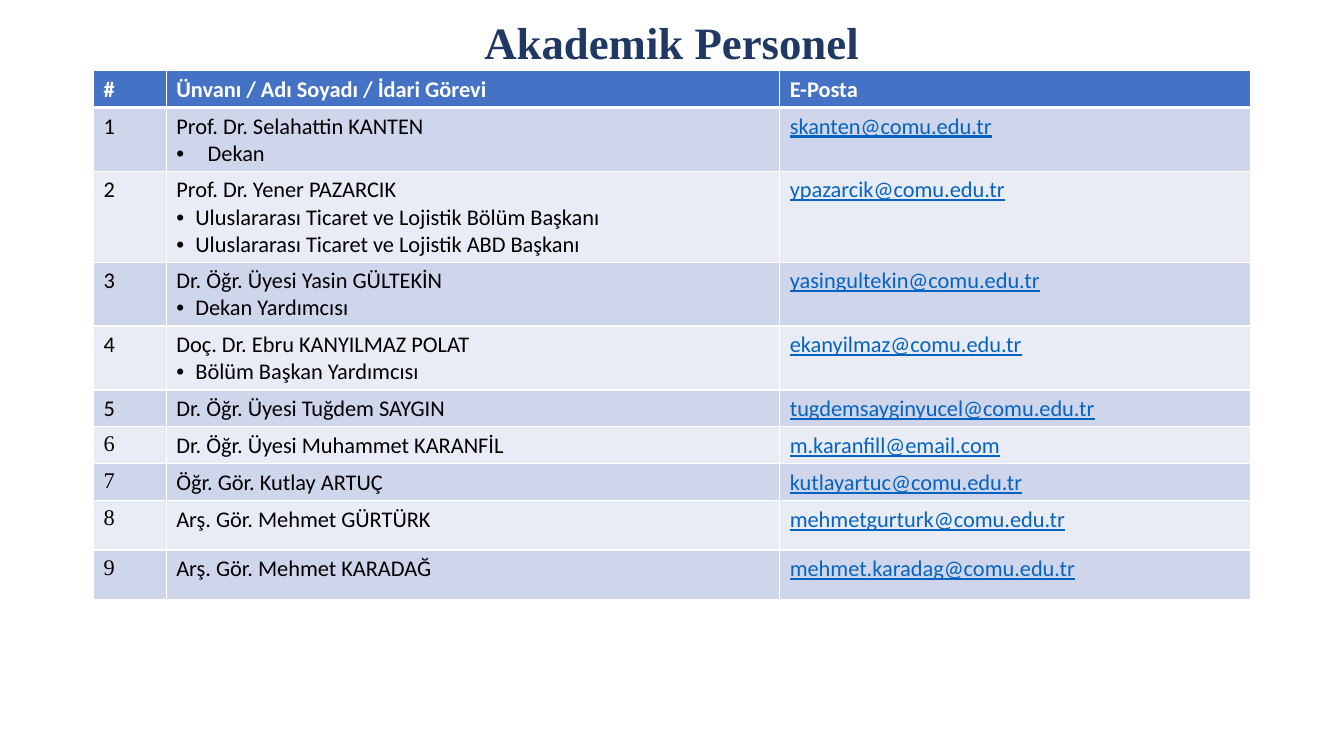
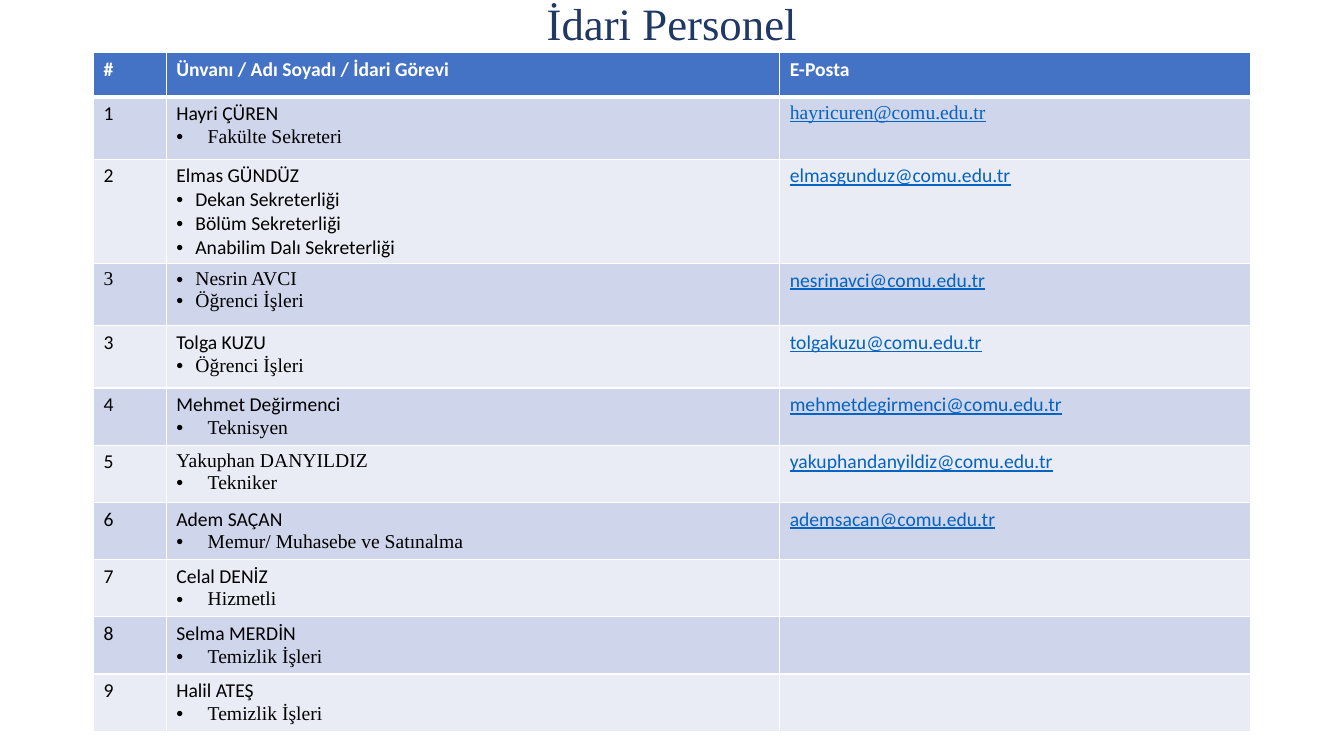
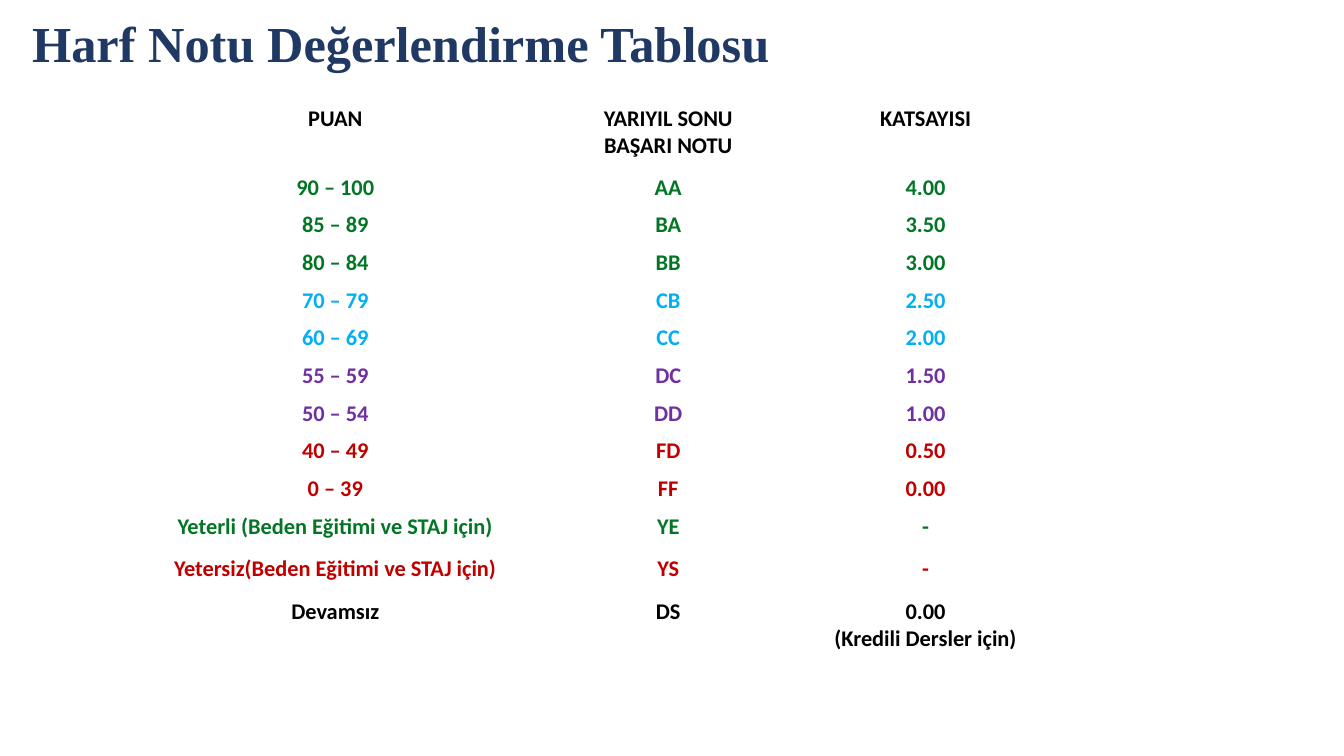
from pptx import Presentation
from pptx.dml.color import RGBColor as RGB
from pptx.enum.text import MSO_ANCHOR as Anchor, PP_ALIGN as Align
from pptx.oxml.ns import qn
from pptx.util import Cm, Pt
from lxml.etree import SubElement, Element

NAVY = RGB(0x20, 0x38, 0x64)
BLUE = RGB(0x44, 0x72, 0xC4)
LINK = RGB(0x05, 0x63, 0xC1)
DARK = RGB(0xCF, 0xD5, 0xEA)
PALE = RGB(0xE9, 0xEB, 0xF5)
WHITE = RGB(0xFF, 0xFF, 0xFF)
BLACK = RGB(0, 0, 0)
GREEN = RGB(0x03, 0x76, 0x26)
SKY = RGB(0x00, 0xB0, 0xF0)
PLUM = RGB(0x70, 0x30, 0xA0)
RED = RGB(0xC0, 0, 0)
SANS, SERIF = "Calibri", "Times New Roman"
NEAR, FAR = Cm(0.48), Cm(0.79)
PLAIN = "{2D5ABB26-0587-4C30-8999-92F81FD0307C}"


def sans(text, gap=0):
    return text, gap, SANS


def serif(text, gap=0):
    return text, gap, SERIF


HEAD = ["#", "Ünvanı / Adı Soyadı / İdari Görevi", "E-Posta"]

STAFF = [
    (0.92, sans("1"), [sans("Prof. Dr. Selahattin KANTEN"), sans("Dekan", FAR)],
     sans("skanten@comu.edu.tr")),
    (0.92, sans("2"), [sans("Prof. Dr. Yener PAZARCIK"),
                       sans("Uluslararası Ticaret ve Lojistik Bölüm Başkanı", NEAR),
                       sans("Uluslararası Ticaret ve Lojistik ABD Başkanı", NEAR)],
     sans("ypazarcik@comu.edu.tr")),
    (0.92, sans("3"), [sans("Dr. Öğr. Üyesi Yasin GÜLTEKİN"), sans("Dekan Yardımcısı", NEAR)],
     sans("yasingultekin@comu.edu.tr")),
    (0.92, sans("4"), [sans("Doç. Dr. Ebru KANYILMAZ POLAT"),
                       sans("Bölüm Başkan Yardımcısı", NEAR)],
     sans("ekanyilmaz@comu.edu.tr")),
    (0.92, sans("5"), [sans("Dr. Öğr. Üyesi Tuğdem SAYGIN")],
     sans("tugdemsayginyucel@comu.edu.tr")),
    (0.92, serif("6"), [sans("Dr. Öğr. Üyesi Muhammet KARANFİL")],
     sans("m.karanfill@email.com")),
    (0.92, serif("7"), [sans("Öğr. Gör. Kutlay ARTUÇ")], sans("kutlayartuc@comu.edu.tr")),
    (1.24, serif("8"), [sans("Arş. Gör. Mehmet GÜRTÜRK")], sans("mehmetgurturk@comu.edu.tr")),
    (1.24, serif("9"), [sans("Arş. Gör. Mehmet KARADAĞ")], sans("mehmet.karadag@comu.edu.tr")),
]

OFFICE = [
    (1.57, sans("1"), [sans("Hayri ÇÜREN"), serif("Fakülte Sekreteri", FAR)],
     serif("hayricuren@comu.edu.tr")),
    (2.24, sans("2"), [sans("Elmas GÜNDÜZ"), sans("Dekan Sekreterliği", NEAR),
                       sans("Bölüm Sekreterliği", NEAR),
                       sans("Anabilim Dalı Sekreterliği", NEAR)],
     sans("elmasgunduz@comu.edu.tr")),
    (1.57, serif("3"), [serif("Nesrin AVCI", NEAR), serif("Öğrenci İşleri", NEAR)],
     sans("nesrinavci@comu.edu.tr")),
    (1.57, sans("3"), [sans("Tolga KUZU"), serif("Öğrenci İşleri", NEAR)],
     sans("tolgakuzu@comu.edu.tr")),
    (0.92, sans("4"), [sans("Mehmet Değirmenci"), serif("Teknisyen", FAR)],
     sans("mehmetdegirmenci@comu.edu.tr")),
    (0.92, sans("5"), [serif("Yakuphan DANYILDIZ"), serif("Tekniker", FAR)],
     sans("yakuphandanyildiz@comu.edu.tr")),
    (0.92, sans("6"), [sans("Adem SAÇAN"), serif("Memur/ Muhasebe ve Satınalma", FAR)],
     sans("ademsacan@comu.edu.tr")),
    (0.92, sans("7"), [sans("Celal DENİZ"), serif("Hizmetli", FAR)], sans("")),
    (0.92, sans("8"), [sans("Selma MERDİN"), serif("Temizlik İşleri", FAR)], sans("")),
    (1.24, sans("9"), [sans("Halil ATEŞ"), serif("Temizlik İşleri", FAR)], sans("")),
]

LISTS = [
    ("Akademik Personel", (8.66, 0, 16.54, 2.29), True, 1.78, 0.92, 16, STAFF),
    ("İdari Personel", (4.19, 0, 25.48, 1.32), False, 1.32, 1.12, 14, OFFICE),
]

GRADES = [
    (1.73, BLACK, "PUAN", "YARIYIL SONU BAŞARI NOTU", "KATSAYISI"),
    (0.95, GREEN, "90 – 100", "AA", "4.00"),
    (0.95, GREEN, "85 – 89", "BA", "3.50"),
    (0.95, GREEN, "80 – 84", "BB", "3.00"),
    (0.95, SKY, "70 – 79", "CB", "2.50"),
    (0.95, SKY, "60 – 69", "CC", "2.00"),
    (0.95, PLUM, "55 – 59", "DC", "1.50"),
    (0.95, PLUM, "50 – 54", "DD", "1.00"),
    (0.95, RED, "40 – 49", "FD", "0.50"),
    (0.95, RED, "0 – 39", "FF", "0.00"),
    (1.07, GREEN, "Yeterli (Beden Eğitimi ve STAJ için)", "YE", "-"),
    (1.07, RED, "Yetersiz(Beden Eğitimi ve STAJ için)", "YS", "-"),
    (1.68, BLACK, "Devamsız", "DS", "0.00\n(Kredili Dersler için)"),
]


def style(para, face, size, tint, bold=False, under=False):
    for run in para.runs:
        font = run.font
        font.name, font.size, font.bold = face, Pt(size), bold
        font.color.rgb = tint
        if under:
            font.underline = True


def add_title(slide, text, box, size=32, bold=True, align=Align.CENTER):
    frame = slide.shapes.add_textbox(*map(Cm, box)).text_frame
    frame.word_wrap = True
    frame.vertical_anchor = Anchor.MIDDLE
    para = frame.paragraphs[0]
    para.text = text
    para.alignment = align
    para.line_spacing = 0.9
    style(para, SERIF, size, NAVY, bold)


def add_grid(slide, left, top, cols, rows):
    shape = slide.shapes.add_table(len(rows), len(cols), Cm(left), Cm(top),
                                   Cm(sum(cols)), Cm(sum(rows)))
    for node in shape.element.iter(qn("a:tableStyleId")):
        node.text = PLAIN
    grid = shape.table
    grid.horz_banding = False
    for col, width in zip(grid.columns, cols):
        col.width = Cm(width)
    for row, height in zip(grid.rows, rows):
        row.height = Cm(height)
    return grid


def add_edges(cell, over, under):
    props = cell._tc.get_or_add_tcPr()
    for spot, (side, width) in enumerate(zip("LRTB", (1, 1, over, under))):
        line = Element(qn("a:ln" + side), w=str(Pt(width)))
        fill = SubElement(line, qn("a:solidFill"))
        SubElement(fill, qn("a:srgbClr"), val=str(WHITE))
        props.insert(spot, line)


def add_bullet(para, gap):
    props = para._p.get_or_add_pPr()
    props.set("marL", str(gap))
    props.set("indent", str(-gap))
    SubElement(props, qn("a:buFont"), typeface="Arial")
    SubElement(props, qn("a:buChar"), char="•")


def fill_cell(cell, lines, size, tint, bold=False, under=False):
    cell.text_frame.text = "\n".join(text for text, _, _ in lines)
    for para, (_, gap, face) in zip(cell.text_frame.paragraphs, lines):
        if gap:
            add_bullet(para, gap)
        style(para, face, size, tint, bold, under)


def add_list(slide, title, box, bold, top, head, size, people):
    add_title(slide, title, box, bold=bold)
    heights = [head] + [person[0] for person in people]
    grid = add_grid(slide, 2.36, top, (1.83, 15.46, 11.87), heights)
    body = [[[sans(text)] for text in HEAD]]
    body += [[[num], names, [mail]] for _, num, names, mail in people]
    for r, row in enumerate(body):
        for c, lines in enumerate(row):
            cell = grid.cell(r, c)
            cell.fill.solid()
            cell.fill.fore_color.rgb = (DARK if r % 2 else PALE) if r else BLUE
            add_edges(cell, 3 if r == 1 else 1, 1 if r else 3)
            mail = r > 0 and c == 2
            tint = LINK if mail else BLACK if r else WHITE
            fill_cell(cell, lines, size, tint, r == 0, mail)


def add_grades(slide):
    add_title(slide, "Harf Notu Değerlendirme Tablosu", (0.56, 0.05, 22.53, 2.24),
              36, align=Align.LEFT)
    grid = add_grid(slide, 1.95, 2.51, (13, 3.78, 9.19), [row[0] for row in GRADES])
    for r, (_, tint, *texts) in enumerate(GRADES):
        for c, text in enumerate(texts):
            cell = grid.cell(r, c)
            cell.fill.background()
            cell.margin_left = cell.margin_right = Cm(0.13)
            cell.margin_top = cell.margin_bottom = Cm(0.13)
            fill_cell(cell, [sans(line) for line in text.split("\n")], 16, tint, True)
            for para in cell.text_frame.paragraphs:
                para.alignment = Align.CENTER
                para.line_spacing = 1.01


def main():
    deck = Presentation()
    deck.slide_width, deck.slide_height = Cm(33.87), Cm(19.05)
    blank = deck.slide_layouts[6]
    for item in LISTS:
        add_list(deck.slides.add_slide(blank), *item)
    add_grades(deck.slides.add_slide(blank))
    deck.save("out.pptx")


if __name__ == "__main__":
    main()
